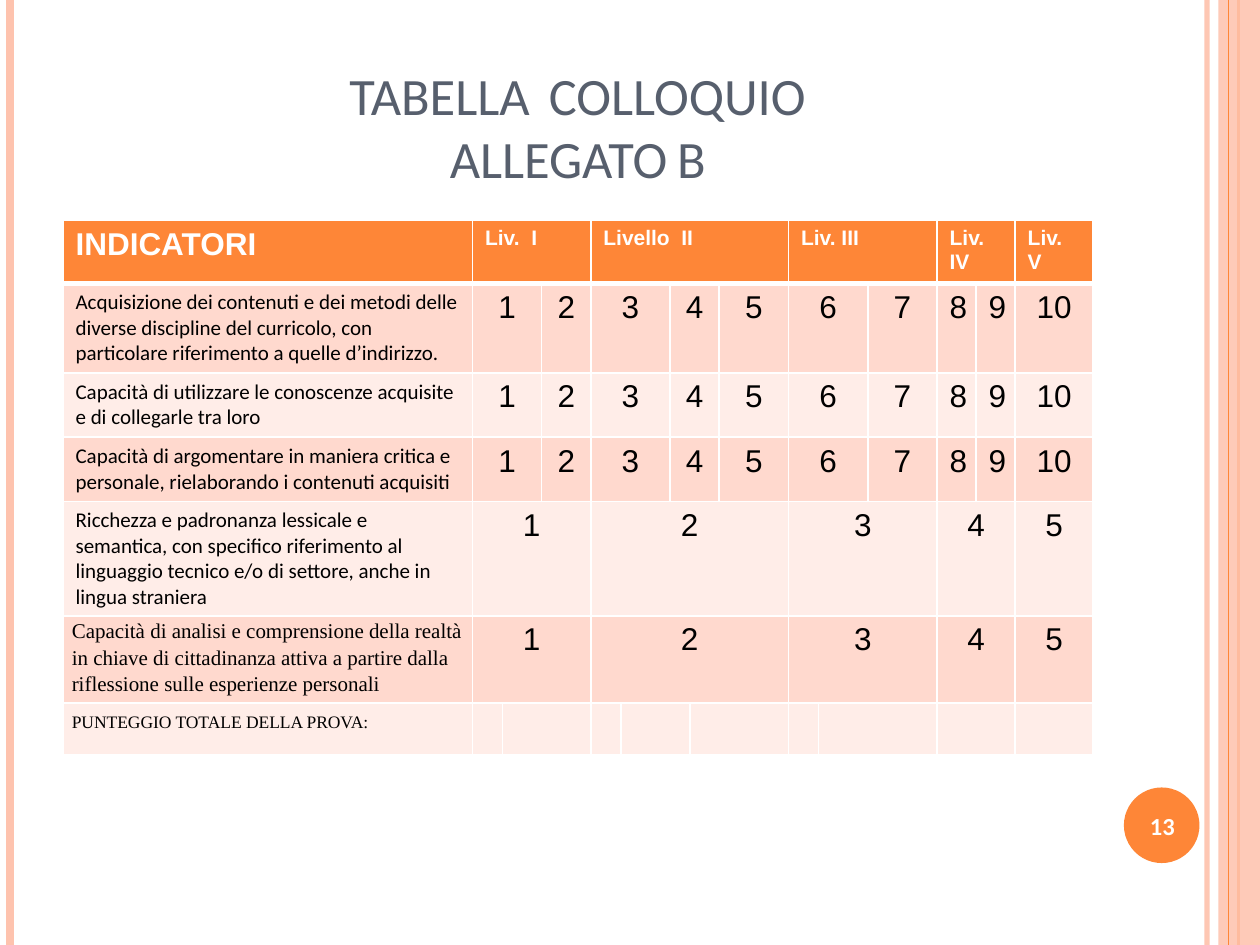
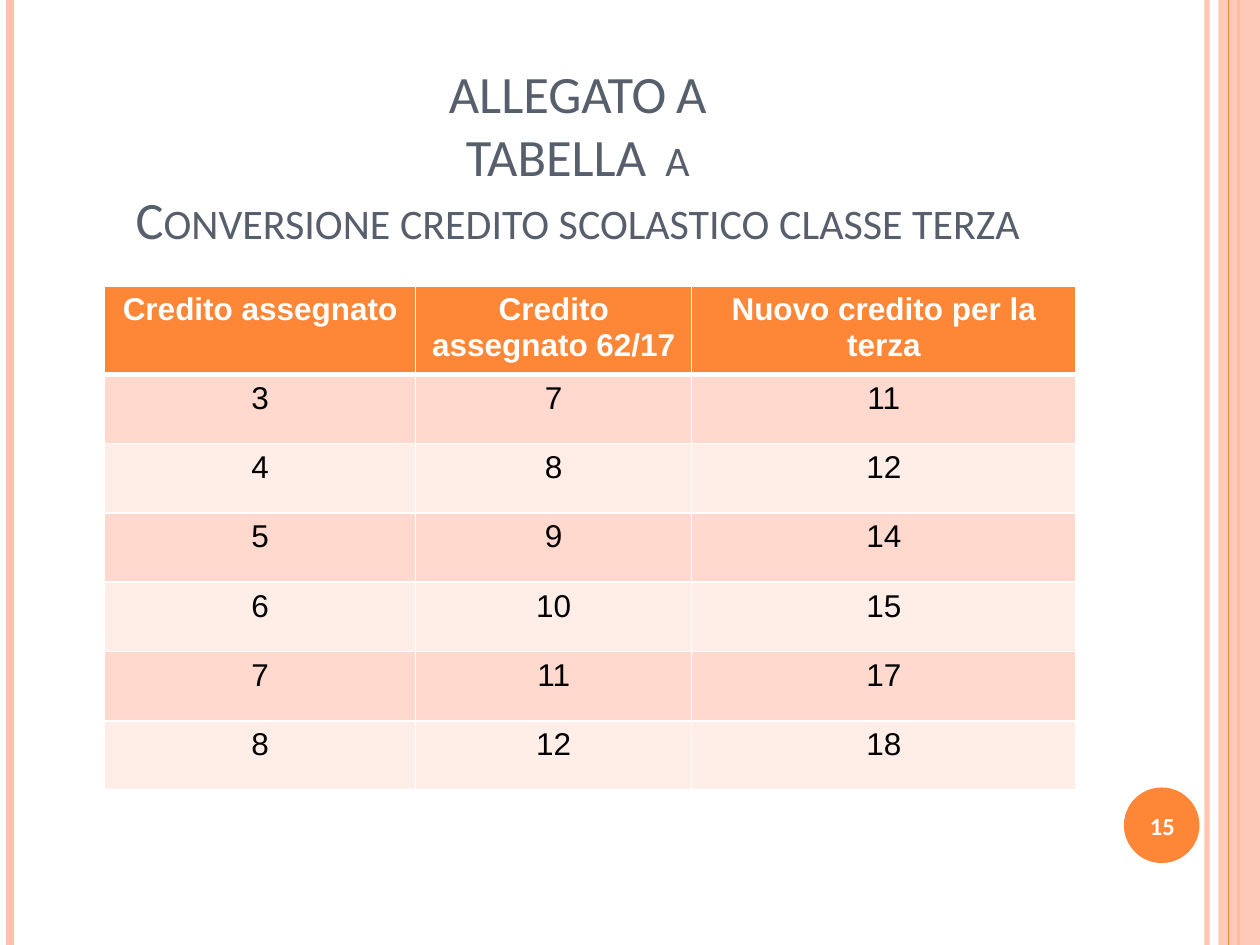
import pptx
import pptx.util
import pptx.dml.color
import pptx.enum.shapes
import pptx.enum.text
import pptx.oxml.ns
import lxml.etree

Inches = pptx.util.Inches
Pt = pptx.util.Pt
RGBColor = pptx.dml.color.RGBColor
Align = pptx.enum.text.PP_ALIGN
Anchor = pptx.enum.text.MSO_ANCHOR
Shape = pptx.enum.shapes.MSO_SHAPE
qn = pptx.oxml.ns.qn

ORANGE = RGBColor(0xFE, 0x86, 0x37)
PEACH = RGBColor(0xFE, 0xC3, 0xAE)
BAND_DARK = RGBColor(0xFF, 0xD9, 0xCE)
BAND_LIGHT = RGBColor(0xFF, 0xED, 0xE8)
SLATE = RGBColor(0x57, 0x5F, 0x6D)
WHITE = RGBColor(0xFF, 0xFF, 0xFF)
BLACK = RGBColor(0, 0, 0)

SLIDE_WIDTH, SLIDE_HEIGHT = 10, 7.5

RULES_BEHIND_BAND = [(9.58, PEACH, 3, 93), (0.08, PEACH, 4.5, 100), (9.83, ORANGE, 1.5, 100)]
RULE_ON_BAND = (9.75, ORANGE, 0.75, 100)

INTERVIEW_TITLE = ["TABELLA  COLLOQUIO", "ALLEGATO B"]
INTERVIEW_COLUMNS = [3.25, 0.23, 0.31, 0.39, 0.23, 0.39, 0.16, 0.23,
                     0.55, 0.23, 0.39, 0.55, 0.31, 0.31, 0.62]
INTERVIEW_ROWS = [0.46, 0.71, 0.51, 0.51, 0.91, 0.63, 0.41]
LEVEL_SPANS = [3, 5, 3, 2, 1]
TEN_POINT_SPANS = [2, 1, 2, 2, 1, 2, 1, 1, 1, 1]
TOTAL_SPANS = [1, 2, 1, 2, 2, 1, 2, 2, 1]
LEVELS = ["Liv.  I", "Livello  II", "Liv. III", "Liv. IV", "Liv. V"]
TEN_POINT_INDICATORS = [
    "Acquisizione dei contenuti e dei metodi delle diverse discipline del curricolo, "
    "con particolare riferimento a quelle d’indirizzo.",
    "Capacità di utilizzare le conoscenze acquisite e di collegarle tra loro",
    "Capacità di argomentare in maniera critica e personale, "
    "rielaborando i contenuti acquisiti",
]
VOCABULARY_INDICATOR = (
    "Ricchezza e padronanza lessicale e semantica, con specifico riferimento al "
    "linguaggio tecnico e/o di settore, anche in lingua straniera")
CITIZENSHIP_INDICATOR = (
    "Capacità di analisi e comprensione della realtà in chiave di cittadinanza attiva "
    "a partire dalla riflessione sulle esperienze personali")
TOTAL_LABEL = "PUNTEGGIO TOTALE DELLA PROVA:"

CREDIT_TITLE = ["ALLEGATO A", "TABELLA  a", "Conversione credito scolastico classe terza"]
CREDIT_COLUMNS = [2.47, 2.19, 3.05]
CREDIT_ROWS = [0.7] + [0.55] * 6
CREDIT_HEADERS = ["Credito assegnato", "Credito assegnato 62/17", "Nuovo credito per la terza"]
CREDITS = [(3, 7, 11), (4, 8, 12), (5, 9, 14), (6, 10, 15), (7, 11, 17), (8, 12, 18)]


def set_alpha(fill_parent, percent):
    color = next(fill_parent.iter(qn("a:srgbClr")))
    lxml.etree.SubElement(color, qn("a:alpha"), val=str(percent * 1000))


def add_run(paragraph, text, size, font="Arial", color=BLACK, bold=False):
    run = paragraph.add_run()
    run.text = text
    run.font.size = Pt(size)
    run.font.name = font
    run.font.color.rgb = color
    run.font.bold = bold
    return run


def add_rule(slide, x, color, width, opacity):
    rule = slide.shapes.add_connector(
        pptx.enum.shapes.MSO_CONNECTOR.STRAIGHT,
        Inches(x), 0, Inches(x), Inches(SLIDE_HEIGHT))
    rule.line.color.rgb = color
    rule.line.width = Pt(width)
    properties = rule._element.spPr
    if opacity < 100:
        set_alpha(properties, opacity)
    lxml.etree.SubElement(properties, qn("a:effectLst"))


def add_plain_shape(slide, kind, box, color):
    shape = slide.shapes.add_shape(kind, *map(Inches, box))
    shape.shadow.inherit = False
    shape.fill.solid()
    shape.fill.fore_color.rgb = color
    shape.line.fill.background()
    return shape


def add_text_box(slide, box, anchor):
    frame = slide.shapes.add_textbox(*map(Inches, box)).text_frame
    frame.word_wrap = True
    frame.vertical_anchor = anchor
    paragraph = frame.paragraphs[0]
    paragraph.alignment = Align.CENTER
    return paragraph


def add_frame(slide):
    for rule in RULES_BEHIND_BAND:
        add_rule(slide, *rule)
    band = add_plain_shape(slide, Shape.RECTANGLE, (9.67, 0, 0.33, SLIDE_HEIGHT), PEACH)
    set_alpha(band._element.spPr, 87)
    add_rule(slide, *RULE_ON_BAND)
    add_plain_shape(slide, Shape.OVAL, (8.92, 6.25, 0.6, 0.6), ORANGE)


def add_title(slide, lines, height):
    paragraph = add_text_box(slide, (0.5, 0.3, 8.17, height), Anchor.BOTTOM)
    for index, line in enumerate(lines):
        if index:
            paragraph.add_line_break()
        run = add_run(paragraph, line, 30, "Calibri", SLATE)
        run.font._element.set("cap", "small")


def add_page_number(slide, number):
    paragraph = add_text_box(slide, (8.89, 6.27, 0.67, 0.57), Anchor.MIDDLE)
    add_run(paragraph, str(number), 14, "Calibri", WHITE, True)


def style_cell(cell, row):
    properties = cell._tc.get_or_add_tcPr()
    widths = {"L": 1, "R": 1, "T": 3 if row == 1 else 1, "B": 3 if row == 0 else 1}
    for side, width in widths.items():
        line = lxml.etree.SubElement(properties, qn("a:ln" + side), w=str(Pt(width)))
        fill = lxml.etree.SubElement(line, qn("a:solidFill"))
        lxml.etree.SubElement(fill, qn("a:srgbClr"), val=str(WHITE))
    cell.fill.solid()
    cell.fill.fore_color.rgb = ORANGE if row == 0 else (BAND_LIGHT, BAND_DARK)[row % 2]


def add_grid(slide, left, top, columns, rows):
    table = slide.shapes.add_table(
        len(rows), len(columns), Inches(left), Inches(top),
        Inches(sum(columns)), Inches(sum(rows))).table
    table.first_row = table.horz_banding = False
    for column, width in zip(table.columns, columns):
        column.width = Inches(width)
    for index, height in enumerate(rows):
        table.rows[index].height = Inches(height)
        for cell in table.rows[index].cells:
            style_cell(cell, index)
    return table


def write_cell(cell, text, size=18, font="Arial", header=False, align=Align.CENTER):
    paragraph = cell.text_frame.paragraphs[0]
    paragraph.alignment = align
    add_run(paragraph, str(text), size, font, WHITE if header else BLACK, header)
    return paragraph


def write_spans(table, row, spans, texts, **style):
    column = 1
    for index, span in enumerate(spans):
        cell = table.cell(row, column)
        if span > 1:
            cell.merge(table.cell(row, column + span - 1))
        if texts:
            write_cell(cell, texts[index], **style)
        column += span


def write_tight_label(cell, text, size, spacing):
    cell.margin_left = cell.margin_right = Inches(0.07)
    cell.margin_top = cell.margin_bottom = 0
    paragraph = write_cell(cell, text, size, "Times New Roman", align=Align.LEFT)
    paragraph.line_spacing = spacing


def fill_interview_slide(slide):
    add_title(slide, INTERVIEW_TITLE, 1.25)
    table = add_grid(slide, 0.5, 1.75, INTERVIEW_COLUMNS, INTERVIEW_ROWS)
    write_cell(table.cell(0, 0), "INDICATORI", header=True, align=Align.LEFT)
    write_spans(table, 0, LEVEL_SPANS, LEVELS, size=12, header=True, align=Align.LEFT)
    for row, label in enumerate(TEN_POINT_INDICATORS + [VOCABULARY_INDICATOR], 1):
        write_cell(table.cell(row, 0), label, 12, "Calibri", align=Align.LEFT)
    write_tight_label(table.cell(5, 0), CITIZENSHIP_INDICATOR, 12, 1.15)
    write_tight_label(table.cell(6, 0), TOTAL_LABEL, 10, 1.5)
    for row in (1, 2, 3):
        write_spans(table, row, TEN_POINT_SPANS, range(1, 11))
    for row in (4, 5):
        write_spans(table, row, LEVEL_SPANS, range(1, 6))
    write_spans(table, 6, TOTAL_SPANS, None)


def fill_credit_slide(slide):
    add_title(slide, CREDIT_TITLE, 1.73)
    table = add_grid(slide, 0.83, 2.27, CREDIT_COLUMNS, CREDIT_ROWS)
    for row, values in enumerate([CREDIT_HEADERS] + CREDITS):
        for column, value in enumerate(values):
            write_cell(table.cell(row, column), value, header=row == 0)


def main():
    presentation = pptx.Presentation()
    presentation.slide_width = Inches(SLIDE_WIDTH)
    presentation.slide_height = Inches(SLIDE_HEIGHT)
    for fill_slide, number in ((fill_interview_slide, 13), (fill_credit_slide, 15)):
        slide = presentation.slides.add_slide(presentation.slide_layouts[6])
        add_frame(slide)
        fill_slide(slide)
        add_page_number(slide, number)
    presentation.save("out.pptx")


if __name__ == "__main__":
    main()
